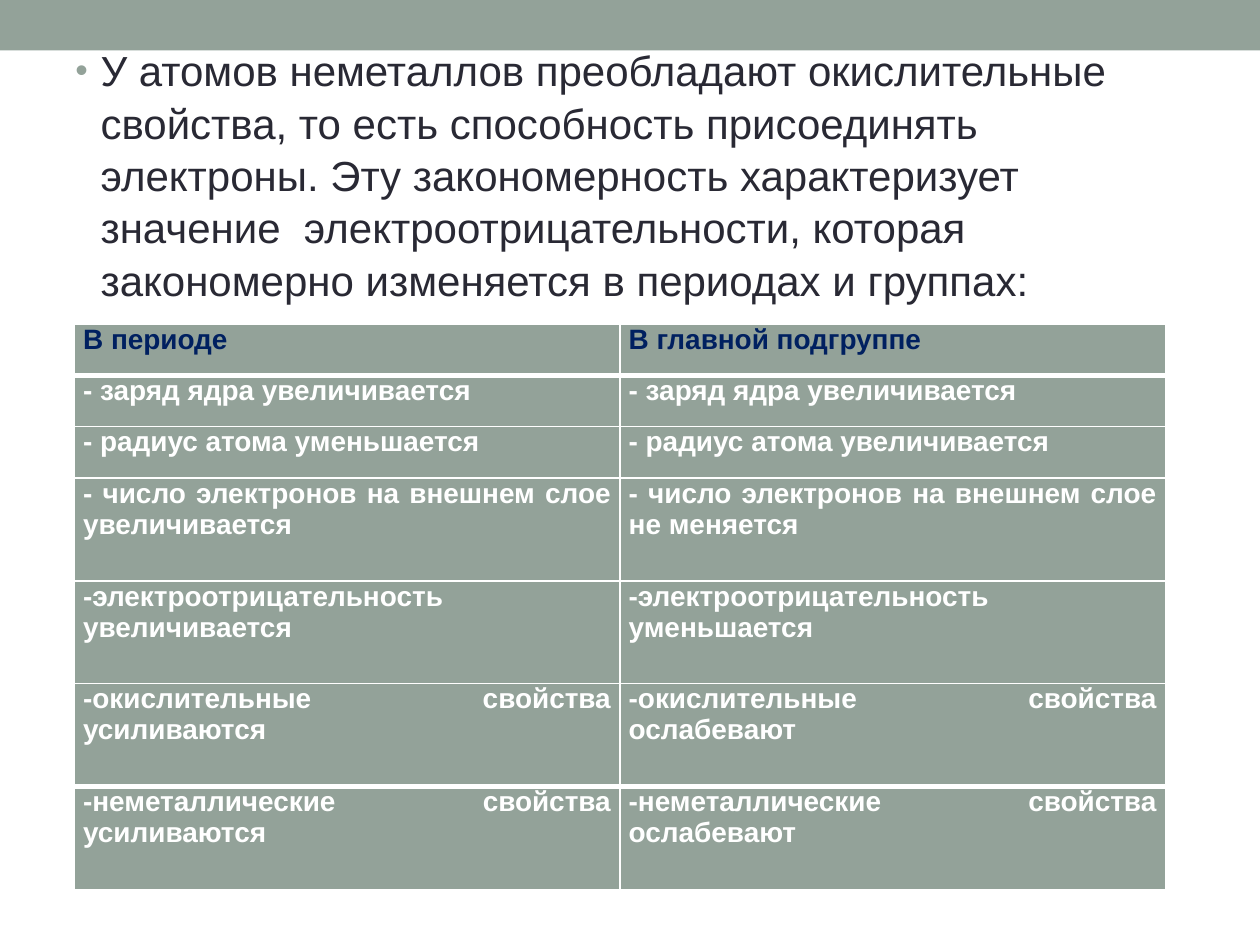
"""Build a slide on how non-metal properties change across periods and groups."""
from typing import NamedTuple

from lxml import etree
from pptx import Presentation
from pptx.dml.color import RGBColor
from pptx.enum.shapes import MSO_SHAPE
from pptx.enum.text import PP_ALIGN
from pptx.oxml.ns import qn
from pptx.util import Inches, Pt

RECTANGLE = MSO_SHAPE.RECTANGLE
LEFT = PP_ALIGN.LEFT
JUSTIFY = PP_ALIGN.JUSTIFY

SAGE = RGBColor(0x93, 0xA2, 0x99)
INK = RGBColor(0x29, 0x29, 0x34)
NAVY = RGBColor(0x00, 0x20, 0x60)
WHITE = RGBColor(0xFF, 0xFF, 0xFF)

INTRO = (
    "У атомов неметаллов преобладают окислительные свойства, то есть "
    "способность присоединять электроны. Эту закономерность характеризует "
    "значение  электроотрицательности, которая закономерно изменяется "
    "в периодах и группах:"
)
CELL_FORMAT = {
    "margin_left": Inches(0.07),
    "margin_right": Inches(0.07),
    "margin_top": 0,
    "margin_bottom": 0,
}
ROW_UNIT = 4.49 / 11
THIN, THICK = Pt(1), Pt(3)


class Row(NamedTuple):
    period: str
    group: str
    units: int = 2
    color: RGBColor = WHITE
    top: int = THIN
    bottom: int = THIN


ROWS = [
    Row("В периоде", "В главной подгруппе", 1, NAVY, bottom=THICK),
    Row("- заряд ядра увеличивается", "- заряд ядра увеличивается", 1, top=THICK),
    Row("- радиус атома уменьшается", "- радиус атома увеличивается", 1),
    Row("- число электронов на внешнем слое увеличивается",
        "- число электронов на внешнем слое не меняется"),
    Row("-электроотрицательность увеличивается",
        "-электроотрицательность уменьшается"),
    Row("-окислительные свойства усиливаются",
        "-окислительные свойства ослабевают", bottom=THICK),
    Row("-неметаллические свойства усиливаются",
        "-неметаллические свойства ослабевают", top=THICK),
]


def set_attrs(target, values: dict) -> None:
    for name, value in values.items():
        setattr(target, name, value)


def write(p, text: str, size: int, color: RGBColor, bold: bool, align) -> None:
    p.alignment = align
    r = p.add_run()
    r.text = text
    set_attrs(r.font, {"name": "Arial", "size": Pt(size), "bold": bold})
    r.font.color.rgb = color


def add_bullet(p) -> None:
    pPr = p._p.get_or_add_pPr()
    pPr.set("marL", str(Inches(0.2)))
    pPr.set("indent", str(Inches(-0.2)))
    color = etree.SubElement(pPr, qn("a:buClr"))
    etree.SubElement(color, qn("a:srgbClr"), val=str(SAGE))
    etree.SubElement(pPr, qn("a:buSzPct"), val="85000")
    etree.SubElement(pPr, qn("a:buFont"), typeface="Arial")
    etree.SubElement(pPr, qn("a:buChar"), char="•")


def add_borders(cell, top: int, bottom: int) -> None:
    tcPr = cell._tc.get_or_add_tcPr()
    widths = {"a:lnL": THIN, "a:lnR": THIN, "a:lnT": top, "a:lnB": bottom}
    for tag, width in widths.items():
        ln = etree.SubElement(tcPr, qn(tag), w=str(width))
        fill = etree.SubElement(ln, qn("a:solidFill"))
        etree.SubElement(fill, qn("a:srgbClr"), val=str(WHITE))


def fill_cell(cell, text: str, row: Row) -> None:
    set_attrs(cell, CELL_FORMAT)
    add_borders(cell, row.top, row.bottom)
    cell.fill.solid()
    cell.fill.fore_color.rgb = SAGE
    write(cell.text_frame.paragraphs[0], text, 16, row.color, True, JUSTIFY)


def add_band(s) -> None:
    sp = s.shapes.add_shape(RECTANGLE, 0, 0, Inches(10), Inches(0.4))
    sp.shadow.inherit = False
    sp.fill.solid()
    sp.fill.fore_color.rgb = SAGE
    sp.line.fill.background()


def add_intro(s) -> None:
    sp = s.shapes.add_textbox(Inches(0.5), Inches(0.29), Inches(8.83), Inches(6.79))
    tf = sp.text_frame
    tf.word_wrap = True
    p = tf.paragraphs[0]
    p.line_spacing = 1.04
    write(p, INTRO, 24, INK, False, LEFT)
    add_bullet(p)


def add_trends(s) -> None:
    table = s.shapes.add_table(
        len(ROWS), 2, Inches(0.59), Inches(2.57), Inches(8.66), Inches(4.49)
    ).table
    for i, row in enumerate(ROWS):
        table.rows[i].height = Inches(row.units * ROW_UNIT)
        for j, text in enumerate((row.period, row.group)):
            fill_cell(table.cell(i, j), text, row)


def main() -> None:
    prs = Presentation()
    prs.slide_width, prs.slide_height = Inches(10), Inches(7.5)
    s = prs.slides.add_slide(prs.slide_layouts[6])
    add_band(s)
    add_intro(s)
    add_trends(s)
    prs.save("out.pptx")


if __name__ == "__main__":
    main()
